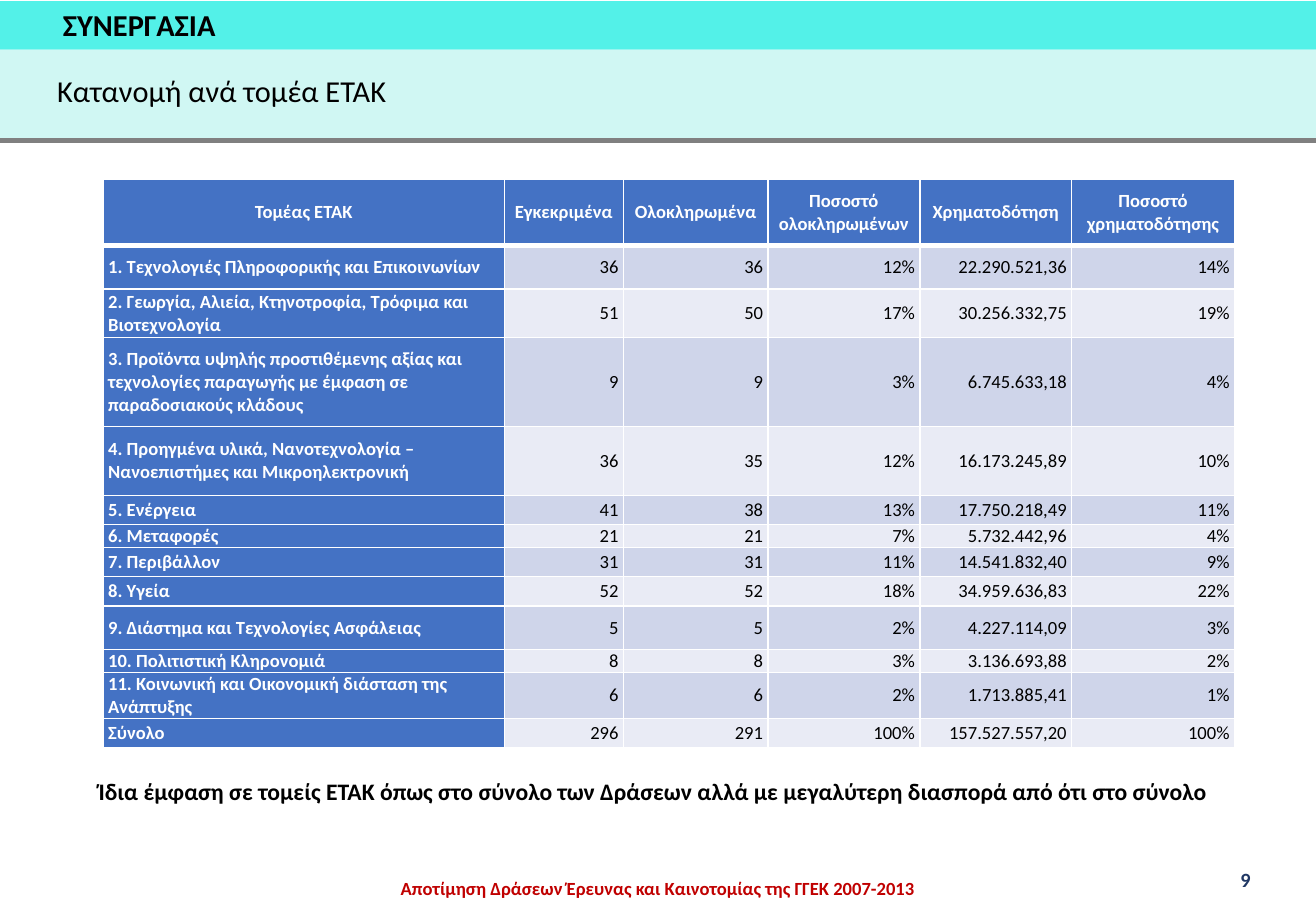
"""Build the slide on the distribution of projects by ETAK sector."""
from dataclasses import dataclass

from lxml import etree
from pptx import Presentation
from pptx.dml.color import RGBColor
from pptx.enum import shapes, text
from pptx.oxml import ns
from pptx.util import Inches, Pt

FONT = "Calibri"
WHITE = RGBColor(0xFF, 0xFF, 0xFF)
BLACK = RGBColor(0, 0, 0)
RED = RGBColor(0xC0, 0, 0)
NAVY = RGBColor(0x20, 0x38, 0x64)
GREY = RGBColor(0x80, 0x80, 0x80)
TURQUOISE = RGBColor(0x53, 0xF1, 0xE8)
PALE_TURQUOISE = RGBColor(0xD0, 0xF7, 0xF3)
BLUE = RGBColor(0x44, 0x72, 0xC4)
ROW_COLOURS = (RGBColor(0xE9, 0xEB, 0xF5), RGBColor(0xCF, 0xD5, 0xEA))

COLUMN_WIDTHS = (3.3, 0.98, 1.19, 1.25, 1.25, 1.34)
HEADER_HEIGHT = 0.54
HEADINGS = ("Τομέας ΕΤΑΚ", "Εγκεκριμένα", "Ολοκληρωμένα", "Ποσοστό ολοκληρωμένων",
            "Χρηματοδότηση", "Ποσοστό χρηματοδότησης")


@dataclass
class Sector:
    height: float
    name: str
    approved: str
    completed: str
    completed_share: str
    funding: str
    funding_share: str

    def values(self) -> tuple[str, ...]:
        return (self.name, self.approved, self.completed, self.completed_share,
                self.funding, self.funding_share)


@dataclass
class Band:
    top: float
    height: float
    colour: RGBColor


@dataclass
class Label:
    content: str
    left: float
    top: float
    width: float
    height: float
    size: float
    colour: RGBColor = BLACK
    bold: bool = True
    align: text.PP_ALIGN = text.PP_ALIGN.LEFT
    wrap: bool = True
    inset: bool = True
    line_spacing: float | Pt = 1.0
    space_after: float = 0


SECTORS = (
    Sector(0.36, "1. Τεχνολογιές Πληροφορικής και Επικοινωνίων",
           "36", "36", "12%", "22.290.521,36", "14%"),
    Sector(0.4, "2. Γεωργία, Αλιεία, Κτηνοτροφία, Τρόφιμα και Βιοτεχνολογία",
           "51", "50", "17%", "30.256.332,75", "19%"),
    Sector(0.73, "3. Προϊόντα υψηλής προστιθέμενης αξίας και τεχνολογίες παραγωγής "
           "με έμφαση σε παραδοσιακούς κλάδους", "9", "9", "3%", "6.745.633,18", "4%"),
    Sector(0.57, "4. Προηγμένα υλικά, Νανοτεχνολογία – Νανοεπιστήμες και Μικροηλεκτρονική",
           "36", "35", "12%", "16.173.245,89", "10%"),
    Sector(0.24, "5. Ενέργεια", "41", "38", "13%", "17.750.218,49", "11%"),
    Sector(0.18, "6. Μεταφορές", "21", "21", "7%", "5.732.442,96", "4%"),
    Sector(0.24, "7. Περιβάλλον", "31", "31", "11%", "14.541.832,40", "9%"),
    Sector(0.24, "8. Υγεία", "52", "52", "18%", "34.959.636,83", "22%"),
    Sector(0.36, "9. Διάστημα και Τεχνολογίες Ασφάλειας",
           "5", "5", "2%", "4.227.114,09", "3%"),
    Sector(0.18, "10. Πολιτιστική Κληρονομιά", "8", "8", "3%", "3.136.693,88", "2%"),
    Sector(0.36, "11. Κοινωνική και Οικονομική διάσταση της Ανάπτυξης",
           "6", "6", "2%", "1.713.885,41", "1%"),
    Sector(0.24, "Σύνολο", "296", "291", "100%", "157.527.557,20", "100%"),
)
BANDS = (Band(0.01, 0.4, TURQUOISE), Band(0.41, 0.75, PALE_TURQUOISE))
TITLE = Label("Κατανομή ανά τομέα ΕΤΑΚ", 0.37, 0.52, 5.43, 0.41, 18, bold=False,
              line_spacing=1.07)
LABELS = (
    Label("Aποτίμηση Δράσεων Έρευνας και Καινοτομίας της ΓΓΕΚ 2007-2013",
          2.82, 7.05, 5.19, 0.38, 11, RED, align=text.PP_ALIGN.CENTER, inset=False,
          line_spacing=Pt(25.3)),
    Label("9", 10.11, 7.09, 0.52, 0.3, 12, NAVY),
    Label("Ίδια έμφαση σε τομείς ΕΤΑΚ όπως στο σύνολο των Δράσεων αλλά με μεγαλύτερη "
          "διασπορά από ότι στο σύνολο", 0.54, 6.32, 9.67, 0.35, 14,
          align=text.PP_ALIGN.CENTER, line_spacing=1.1, space_after=4.9),
    Label("ΣΥΝΕΡΓΑΣΙΑ", 0.42, 0, 1.47, 0.4, 18, wrap=False),
)


def format_span(span, size: float, colour: RGBColor, bold: bool) -> None:
    span.font.name = FONT
    span.font.size = Pt(size)
    span.font.bold = bold
    span.font.color.rgb = colour


def fill_label(box, label: Label) -> None:
    box.left, box.top = Inches(label.left), Inches(label.top)
    box.width, box.height = Inches(label.width), Inches(label.height)
    frame = box.text_frame
    frame.text = label.content
    frame.word_wrap = label.wrap
    frame.auto_size = text.MSO_AUTO_SIZE.NONE
    frame.vertical_anchor = text.MSO_ANCHOR.TOP
    if not label.inset:
        frame.margin_left = frame.margin_right = frame.margin_top = frame.margin_bottom = 0
    para = frame.paragraphs[0]
    para.alignment = label.align
    para.line_spacing = label.line_spacing
    para.space_before = Pt(0)
    para.space_after = Pt(label.space_after)
    format_span(para.runs[0], label.size, label.colour, label.bold)


def add_band(slide, band: Band, width: int) -> None:
    bar = slide.shapes.add_shape(shapes.MSO_SHAPE.RECTANGLE, 0, Inches(band.top),
                                 width, Inches(band.height))
    bar.shadow.inherit = False
    bar.fill.solid()
    bar.fill.fore_color.rgb = band.colour
    bar.line.fill.background()


def add_rule(slide, width: int) -> None:
    rule = slide.shapes.add_connector(shapes.MSO_CONNECTOR.STRAIGHT, 0, Inches(1.16),
                                      width, Inches(1.16))
    rule.line.color.rgb = GREY
    rule.line.width = Pt(3)
    etree.SubElement(rule.element.spPr, ns.qn("a:effectLst"))


def border_cell(cell, top: float, bottom: float) -> None:
    properties = cell._tc.get_or_add_tcPr()
    widths = {"lnL": 1, "lnR": 1, "lnT": top, "lnB": bottom}
    for index, (side, width) in enumerate(widths.items()):
        edge = etree.Element(ns.qn(f"a:{side}"), w=str(Pt(width)))
        paint = etree.SubElement(edge, ns.qn("a:solidFill"))
        etree.SubElement(paint, ns.qn("a:srgbClr"), val=str(WHITE))
        properties.insert(index, edge)


def fill_cell(cell, content: str, row: int, column: int) -> None:
    heading = row == 0 or column == 0
    cell.margin_left = cell.margin_right = Inches(0.04)
    cell.margin_top = cell.margin_bottom = 0
    cell.vertical_anchor = text.MSO_ANCHOR.MIDDLE
    cell.fill.solid()
    cell.fill.fore_color.rgb = BLUE if heading else ROW_COLOURS[row % 2]
    border_cell(cell, top=3 if row == 1 else 1, bottom=3 if row == 0 else 1)
    para = cell.text_frame.paragraphs[0]
    para.text = content
    para.space_after = Pt(2)
    if row == 0:
        para.alignment = text.PP_ALIGN.CENTER
    else:
        para.alignment = text.PP_ALIGN.RIGHT if column else text.PP_ALIGN.LEFT
    format_span(para.runs[0], 11, WHITE if heading else BLACK, heading)


def add_sector_table(slide) -> None:
    heights = (HEADER_HEIGHT, *(sector.height for sector in SECTORS))
    rows = (HEADINGS, *(sector.values() for sector in SECTORS))
    table = slide.shapes.add_table(len(rows), len(HEADINGS), Inches(0.85), Inches(1.48),
                                   Inches(sum(COLUMN_WIDTHS)), Inches(sum(heights))).table
    for column, width in zip(table.columns, COLUMN_WIDTHS):
        column.width = Inches(width)
    for row_index, (height, values) in enumerate(zip(heights, rows)):
        table.rows[row_index].height = Inches(height)
        for column_index, content in enumerate(values):
            fill_cell(table.cell(row_index, column_index), content, row_index, column_index)


def main() -> None:
    deck = Presentation()
    deck.slide_width, deck.slide_height = Inches(10.83), Inches(7.5)
    page = deck.slides.add_slide(deck.slide_layouts[5])
    for band in BANDS:
        add_band(page, band, deck.slide_width)
    add_rule(page, deck.slide_width)
    add_sector_table(page)
    for label in LABELS:
        fill_label(page.shapes.add_textbox(0, 0, 0, 0), label)
    title = page.shapes.title
    fill_label(title, TITLE)
    title.element.getparent().append(title.element)
    deck.save("out.pptx")


if __name__ == "__main__":
    main()
